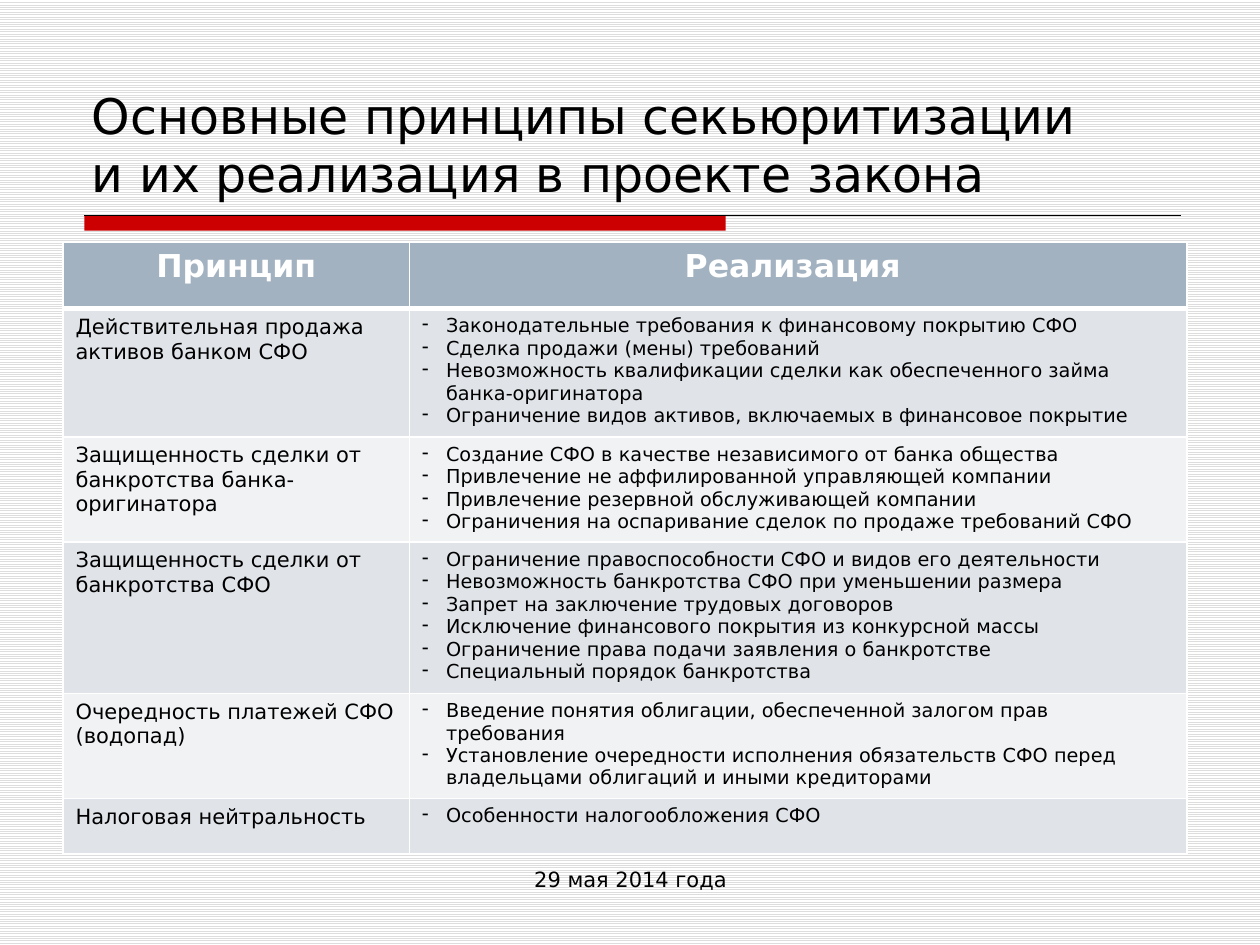
import pptx
import pptx.util
import pptx.dml.color
import pptx.enum.dml
import pptx.enum.shapes
import pptx.enum.text
import pptx.oxml
import pptx.oxml.ns
from pptx.util import Inches

RGBColor = pptx.dml.color.RGBColor
BLACK = RGBColor(0x00, 0x00, 0x00)
WHITE = RGBColor(0xFF, 0xFF, 0xFF)
GRAY = RGBColor(0xDD, 0xDD, 0xDD)
RED = RGBColor(0xCC, 0x00, 0x00)
HEADER = RGBColor(0xA3, 0xB2, 0xC1)
BANDS = [RGBColor(0xE0, 0xE4, 0xE9), RGBColor(0xF0, 0xF2, 0xF4)]
ALIGN = pptx.enum.text.PP_ALIGN
ANCHOR = pptx.enum.text.MSO_ANCHOR

PRINCIPLES = [
    ("Действительная продажа активов банком СФО", [
        "Законодательные требования к финансовому покрытию СФО",
        "Сделка продажи (мены) требований",
        "Невозможность квалификации сделки как обеспеченного займа банка-оригинатора",
        "Ограничение видов активов, включаемых в финансовое покрытие"]),
    ("Защищенность сделки от банкротства банка-оригинатора", [
        "Создание СФО в качестве независимого от банка общества",
        "Привлечение не аффилированной управляющей компании",
        "Привлечение резервной обслуживающей компании",
        "Ограничения на оспаривание сделок по продаже требований СФО"]),
    ("Защищенность сделки от банкротства СФО", [
        "Ограничение правоспособности СФО и видов его деятельности",
        "Невозможность банкротства СФО при уменьшении размера",
        "Запрет на заключение трудовых договоров",
        "Исключение финансового покрытия из конкурсной массы",
        "Ограничение права подачи заявления о банкротстве",
        "Специальный порядок банкротства"]),
    ("Очередность платежей СФО (водопад)", [
        "Введение понятия облигации, обеспеченной залогом прав требования",
        "Установление очередности исполнения обязательств СФО перед "
        "владельцами облигаций и иными кредиторами"]),
    ("Налоговая нейтральность", ["Особенности налогообложения СФО"]),
]


class Deck:
    font = "DejaVu Sans"

    def __init__(self, width, height):
        self.prs = pptx.Presentation()
        self.prs.slide_width, self.prs.slide_height = Inches(width), Inches(height)
        self.s = self.prs.slides.add_slide(self.prs.slide_layouts[5])

    def background(self, fore, back):
        fill = self.s.background.fill
        fill.patterned()
        fill.pattern = pptx.enum.dml.MSO_PATTERN.LIGHT_HORIZONTAL
        fill.fore_color.rgb, fill.back_color.rgb = fore, back

    def style(self, p, size, color=BLACK, bold=False, align=ALIGN.LEFT):
        p.alignment = align
        p.font.name = self.font
        p.font.size = pptx.util.Pt(size)
        p.font.bold = bold
        p.font.color.rgb = color

    def title(self, text, x, y, w, h):
        sp = self.s.shapes.title
        sp.left, sp.top, sp.width, sp.height = map(Inches, (x, y, w, h))
        tf = sp.text_frame
        tf.auto_size = pptx.enum.text.MSO_AUTO_SIZE.NONE
        tf.vertical_anchor = ANCHOR.BOTTOM
        tf.text = text
        self.style(tf.paragraphs[0], 28)

    def bar(self, x, y, w, h, color):
        shape = pptx.enum.shapes.MSO_SHAPE.RECTANGLE
        sp = self.s.shapes.add_shape(shape, *map(Inches, (x, y, w, h)))
        sp.shadow.inherit = False
        sp.fill.solid()
        sp.fill.fore_color.rgb = color
        sp.line.fill.background()

    def rule(self, x1, x2, y, color, width):
        kind = pptx.enum.shapes.MSO_CONNECTOR.STRAIGHT
        line = self.s.shapes.add_connector(kind, *map(Inches, (x1, y, x2, y)))
        line.line.color.rgb = color
        line.line.width = pptx.util.Pt(width)
        pr = line._element.spPr
        pr.append(pr.makeelement(pptx.oxml.ns.qn("a:effectLst"), {}))

    def label(self, text, x, y, w, h, size):
        tf = self.s.shapes.add_textbox(*map(Inches, (x, y, w, h))).text_frame
        tf.word_wrap = True
        tf.text = text
        self.style(tf.paragraphs[0], size, align=ALIGN.CENTER)

    def bullet(self, p):
        pr = p._p.get_or_add_pPr()
        pr.set("marL", str(Inches(0.19)))
        pr.set("indent", str(Inches(-0.19)))
        pr.append(pr.makeelement(pptx.oxml.ns.qn("a:buFontTx"), {}))
        pr.append(pr.makeelement(pptx.oxml.ns.qn("a:buChar"), {"char": "-"}))

    def cell(self, cell, lines, fill, size, bulleted=False, bottom=1, **style):
        pr = cell._tc.get_or_add_tcPr()
        for side, width in (("L", 1), ("R", 1), ("T", 1), ("B", bottom)):
            pr.append(pptx.oxml.parse_xml(
                f'<a:ln{side} {pptx.oxml.ns.nsdecls("a")} w="{pptx.util.Pt(width)}">'
                f'<a:solidFill><a:srgbClr val="{WHITE}"/></a:solidFill></a:ln{side}>'))
        cell.fill.solid()
        cell.fill.fore_color.rgb = fill
        cell.text_frame.text = "\n".join(lines)
        for p in cell.text_frame.paragraphs:
            if bulleted:
                self.bullet(p)
            self.style(p, size, **style)

    def table(self, headers, rows, x, y, widths, heights):
        box = map(Inches, (x, y, sum(widths), sum(heights)))
        table = self.s.shapes.add_table(len(heights), len(widths), *box).table
        for column, width in zip(table.columns, widths):
            column.width = Inches(width)
        for row, height in zip(table.rows, heights):
            row.height = Inches(height)
        for i, text in enumerate(headers):
            self.cell(table.cell(0, i), [text], HEADER, 18, bottom=3,
                      color=WHITE, bold=True, align=ALIGN.CENTER)
        for i, (principle, measures) in enumerate(rows):
            fill = BANDS[i % 2]
            self.cell(table.cell(i + 1, 0), [principle], fill, 12)
            self.cell(table.cell(i + 1, 1), measures, fill, 11, bulleted=True)


def main():
    deck = Deck(10, 7.5)
    deck.background(GRAY, WHITE)
    deck.bar(0.67, 1.71, 5.09, 0.12, RED)
    deck.rule(0.67, 9.37, 1.71, BLACK, 0.75)
    deck.rule(0.67, 9.33, 6.75, RED, 0.25)
    deck.title("Основные принципы секьюритизации \vи их реализация в проекте закона",
               0.63, 0.33, 8.75, 1.33)
    deck.label("29 мая 2014 года", 3.42, 6.83, 3.17, 0.52, 12)
    deck.table(["Принцип", "Реализация "], PRINCIPLES, 0.5, 1.92,
               [2.75, 6.17], [0.53, 0.53, 0.74, 0.74, 0.67, 0.44])
    deck.prs.save("out.pptx")


if __name__ == "__main__":
    main()
